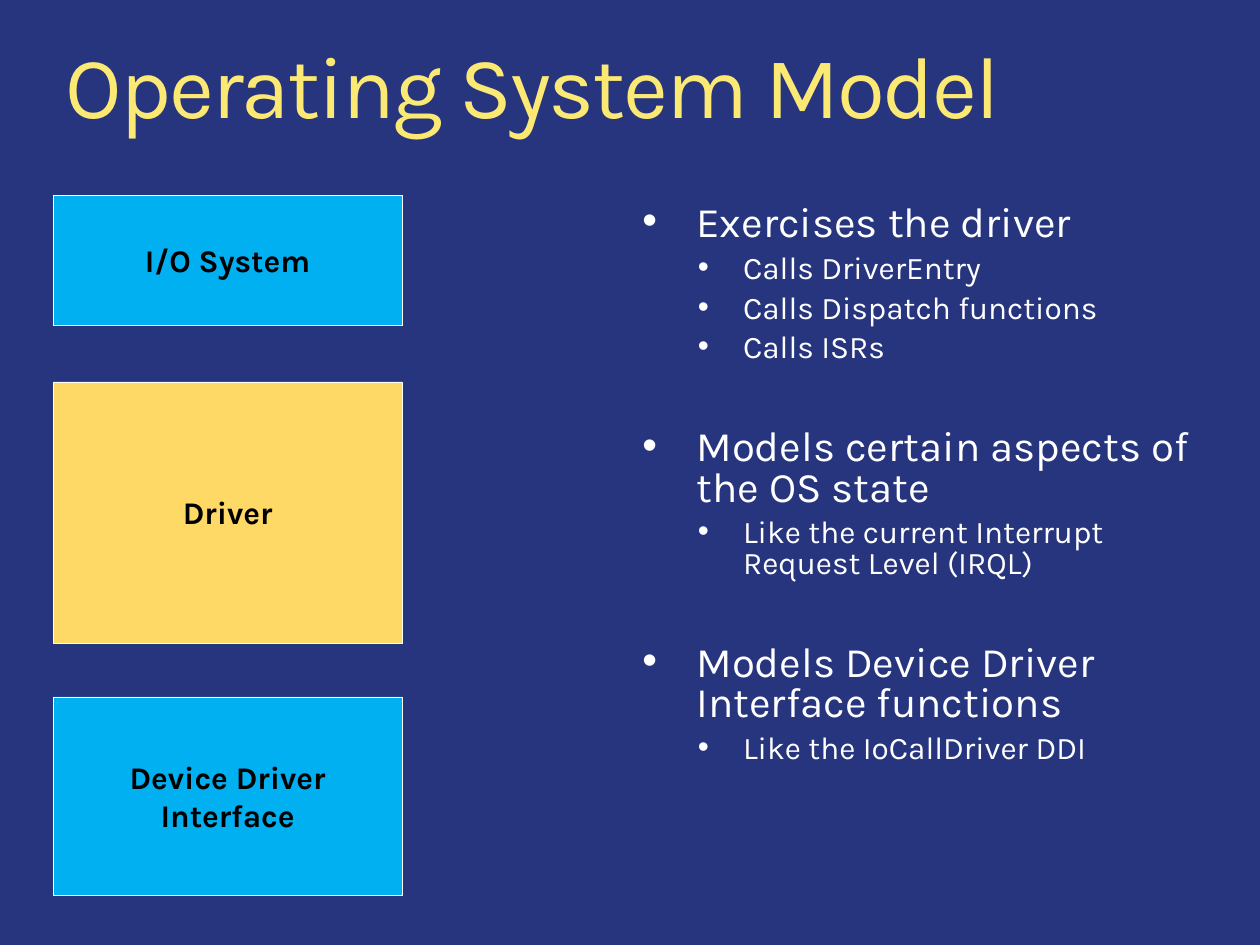
from lxml import etree
from pptx import Presentation
from pptx import util as u
from pptx.dml.color import RGBColor
from pptx.enum import shapes, text
from pptx.oxml import ns

NAVY = RGBColor(0x26, 0x35, 0x7E)
CREAM = RGBColor(0xFC, 0xE9, 0x74)
BLUE = RGBColor(0x00, 0xB0, 0xF0)
GOLD = RGBColor(0xFF, 0xD9, 0x66)
WHITE = RGBColor(0xFF, 0xFF, 0xFF)
BLACK = RGBColor(0x00, 0x00, 0x00)
FONT = "Karla"

LAYERS = [
    (0, 2.62, BLUE, ["I/O System"]),
    (3.76, 5.26, GOLD, ["Driver"]),
    (10.11, 3.99, BLUE, ["Device Driver", "Interface"]),
]
TOPICS = [
    ("Exercises the driver",
     ["Calls DriverEntry", "Calls Dispatch functions", "Calls ISRs"]),
    ("Models certain aspects of the OS state",
     ["Like the current Interrupt Request Level (IRQL)"]),
    ("Models Device Driver Interface functions",
     ["Like the IoCallDriver DDI"]),
]


def write(frame, words, size, color, bold=False, align=text.PP_ALIGN.LEFT,
          line=1.0, before=0, level=0, bullet=None, spacing=None):
    """Add one formatted paragraph, using the frame's empty first one if free."""
    first = frame.paragraphs[0]
    paragraph = frame.add_paragraph() if first.runs else first
    paragraph.level = level
    paragraph.alignment = align
    paragraph.line_spacing = line
    paragraph.space_before = u.Pt(before)
    if bullet:
        margin, hanging = bullet
        properties = paragraph._p.get_or_add_pPr()
        properties.set("marL", str(u.Cm(margin)))
        properties.set("indent", str(-u.Cm(hanging)))
        etree.SubElement(properties, ns.qn("a:buFont"), typeface="Arial")
        etree.SubElement(properties, ns.qn("a:buChar"), char="•")
    run = paragraph.add_run()
    run.text = words
    run.font.name = FONT
    run.font.size = u.Pt(size)
    run.font.bold = bold
    run.font.color.rgb = color
    if spacing is not None:
        run._r.get_or_add_rPr().set("spc", str(round(spacing * 100)))


def place_title(slide, left, top, width, height):
    """Move the title placeholder into its box and fill it."""
    title = slide.shapes.title
    title.left, title.top = u.Cm(left), u.Cm(top)
    title.width, title.height = u.Cm(width), u.Cm(height)
    frame = title.text_frame
    frame.auto_size = text.MSO_AUTO_SIZE.NONE
    frame.vertical_anchor = text.MSO_ANCHOR.TOP
    frame.margin_top = u.Cm(0.23)
    write(frame, "Operating System Model", 50, CREAM, line=0.9, spacing=-1.2)


def place_layers(slide, left, top, width):
    """Draw the stack of system layers."""
    for offset, height, color, lines in LAYERS:
        layer = slide.shapes.add_shape(
            shapes.MSO_SHAPE.RECTANGLE, u.Cm(left), u.Cm(top + offset),
            u.Cm(width), u.Cm(height))
        layer.shadow.inherit = False
        layer.fill.solid()
        layer.fill.fore_color.rgb = color
        layer.line.color.rgb = WHITE
        layer.line.width = u.Pt(0.25)
        frame = layer.text_frame
        frame.word_wrap = False
        frame.vertical_anchor = text.MSO_ANCHOR.MIDDLE
        for words in lines:
            write(frame, words, 18, BLACK, bold=True, align=text.PP_ALIGN.CENTER)


def place_topics(slide, left, top, width, height):
    """Write the topics and their points as a two-level bullet list."""
    box = slide.shapes.add_textbox(u.Cm(left), u.Cm(top), u.Cm(width), u.Cm(height))
    frame = box.text_frame
    frame.word_wrap = True
    frame.margin_top = u.Cm(0.2)
    for index, (topic, points) in enumerate(TOPICS):
        write(frame, topic, 24, WHITE, line=0.8, before=37 if index else 0,
              bullet=(1.09, 1.09))
        for point in points:
            write(frame, point, 18, WHITE, line=0.8, before=5.4, level=1,
                  bullet=(2.03, 0.91))


def main():
    """Build and save the slide."""
    presentation = Presentation()
    presentation.slide_width, presentation.slide_height = u.Cm(25.4), u.Cm(19.05)
    slide = presentation.slides.add_slide(presentation.slide_layouts[5])
    slide.background.fill.solid()
    slide.background.fill.fore_color.rgb = NAVY
    place_title(slide, 1.07, 0.64, 23.27, 1.93)
    place_topics(slide, 12.7, 3.94, 11.71, 12.09)
    place_layers(slide, 1.07, 3.94, 7.04)
    presentation.save("out.pptx")


if __name__ == "__main__":
    main()
